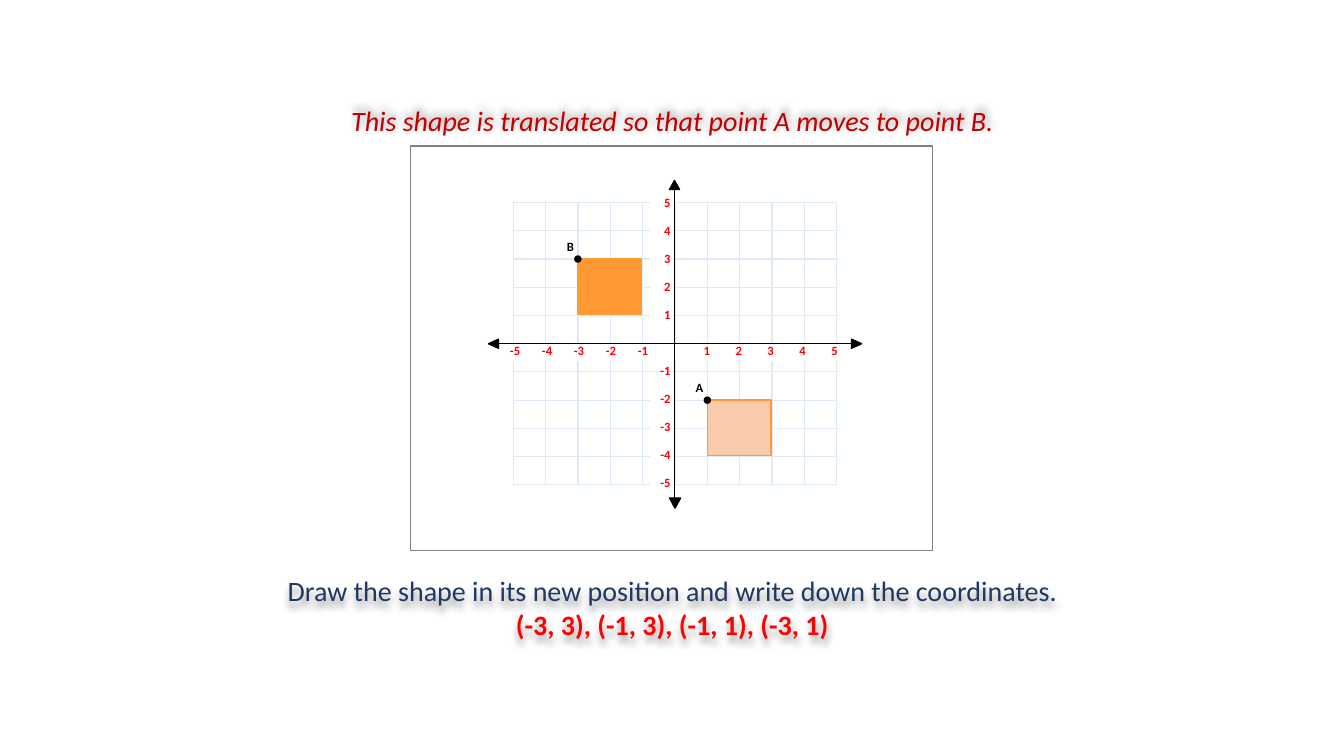
from lxml.etree import SubElement
from pptx import Presentation
from pptx.dml.color import RGBColor
from pptx.enum.shapes import MSO_SHAPE
from pptx.enum.text import MSO_ANCHOR, PP_ALIGN
from pptx.oxml.ns import qn
from pptx.util import Inches, Pt

TITLE = "This shape is translated so that point A moves to point B."
TASK = "Draw the shape in its new position and write down the coordinates."
ANSWER = "(-3, 3), (-1, 3), (-1, 1), (-3, 1)"
BLACK, WHITE, RED, ORANGE = "000000", "FFFFFF", "FF0000", "FF9933"
PALE, GRID, GREY = "F8CBAD", "DEEBF7", "808080"

LEFT, TOP, WIDE, HIGH = 5.09, 2.01, 3.21, 2.8
UNIT_X, UNIT_Y = WIDE / 10, HIGH / 10
MID_X, MID_Y = LEFT + WIDE / 2, TOP + HIGH / 2
SIDE = (0.63, 0.55)
DOT = 0.06

# name: (x, y, fill of the square whose top left corner it marks)
POINTS = {"A": (1, -2, PALE), "B": (-3, 3, ORANGE)}
NUMBERS = [-5, -4, -3, -2, -1, 1, 2, 3, 4, 5]
# left, top, width, height, turn
ARROWS = [
    (6.64, 1.79, 0.1, 0.09, 0),
    (6.64, 4.94, 0.11, 0.1, 180),
    (8.45, 3.36, 0.09, 0.1, 90),
    (4.85, 3.36, 0.09, 0.1, 270),
]

deck = Presentation()
deck.slide_width, deck.slide_height = Inches(13.33), Inches(7.5)
slide = deck.slides.add_slide(deck.slide_layouts[1])


def rgb(code):
    return RGBColor.from_string(code)


def write(para, text, size=9, color=BLACK, bold=False, italic=False,
          align=PP_ALIGN.CENTER):
    para.alignment = align
    para.line_spacing, para.space_before = 1.0, Pt(0)
    run = para.add_run()
    run.text = text
    font = run.font
    font.name, font.size, font.bold, font.italic = "Calibri", Pt(size), bold, italic
    font.color.rgb = rgb(color)


def shade(holder, turn):
    """Give the text a soft shadow, cast at the given angle."""
    effects = SubElement(holder._element.spPr, qn("a:effectLst"))
    cast = SubElement(effects, qn("a:outerShdw"), blurRad=str(Pt(5)),
                      dist=str(Pt(4)), dir=str(turn * 60000), algn="ctr", rotWithShape="0")
    tint = SubElement(cast, qn("a:srgbClr"), val=BLACK)
    SubElement(tint, qn("a:alpha"), val="40000")


def place(holder, top, high, turn):
    holder.left, holder.top = Inches(1.97), Inches(top)
    holder.width, holder.height = Inches(9.4), Inches(high)
    frame = holder.text_frame
    frame.margin_left = frame.margin_right = frame.margin_top = frame.margin_bottom = 0
    frame.vertical_anchor = MSO_ANCHOR.TOP
    frame.word_wrap = True
    shade(holder, turn)
    return frame


def draw(kind, left, top, wide, high, fill, line, turn=0):
    shape = slide.shapes.add_shape(kind, Inches(left), Inches(top), Inches(wide), Inches(high))
    shape.shadow.inherit = False
    shape.fill.solid()
    shape.fill.fore_color.rgb = rgb(fill)
    shape.line.color.rgb = rgb(line)
    shape.line.width = Pt(1)
    shape.rotation = turn


def add_grid(left, top, cols, rows):
    """Add a table with the given column widths and row heights."""
    table = slide.shapes.add_table(
        len(rows), len(cols), Inches(left), Inches(top),
        Inches(sum(cols)), Inches(sum(rows))).table
    table.first_row = table.horz_banding = False
    for col, wide in zip(table.columns, cols):
        col.width = Inches(wide)
    for row, high in zip(table.rows, rows):
        row.height = Inches(high)
    return table


def set_cell(cell, text="", edges="", line=BLACK, fill=WHITE, pad=(0, 0, 0, 0),
             anchor=MSO_ANCHOR.MIDDLE, **style):
    cell.margin_left, cell.margin_top, cell.margin_right, cell.margin_bottom = map(Inches, pad)
    cell.vertical_anchor = anchor
    props = cell._tc.get_or_add_tcPr()
    for edge in "LRTB":
        border = SubElement(props, qn("a:ln" + edge), w=str(Pt(1)))
        if edge in edges:
            paint = SubElement(border, qn("a:solidFill"))
            SubElement(paint, qn("a:srgbClr"), val=line)
        else:
            SubElement(border, qn("a:noFill"))
    if fill:
        cell.fill.solid()
        cell.fill.fore_color.rgb = rgb(fill)
    else:
        cell.fill.background()
    para = cell.text_frame.paragraphs[0]
    if text:
        write(para, text, bold=True, **style)
    else:
        SubElement(para._p, qn("a:endParaRPr"), sz="900")


title, body = slide.placeholders
write(place(title, 1.03, 0.34, 270).paragraphs[0], TITLE, size=20, color="C00000", italic=True)
frame = place(body, 5.69, 0.7, 90)
write(frame.paragraphs[0], TASK, size=20, color="203864")
write(frame.add_paragraph(), ANSWER, size=20, color=RED, bold=True)
for para in frame.paragraphs:
    props = para._p.get_or_add_pPr()
    props.set("marL", "0")
    props.set("indent", "0")
    SubElement(props, qn("a:buNone"))

draw(MSO_SHAPE.RECTANGLE, 4.07, 1.45, 5.18, 4.01, WHITE, GREY)

# A point's name sits in the cell up and left of it
names = {(5 - y - 1, x + 5 - 1): name for name, (x, y, _) in POINTS.items()}
grid = add_grid(LEFT, TOP, [UNIT_X] * 10, [UNIT_Y] * 10)
for row in range(10):
    for col in range(10):
        set_cell(grid.cell(row, col), names.get((row, col), ""), "LRTB", GRID,
                 pad=(0.04,) * 4, anchor=MSO_ANCHOR.BOTTOM, align=PP_ALIGN.RIGHT)

axis_y = add_grid(6.45, 1.88, [0.24], [3.06 / 11] * 11)
for row in range(11):
    value = 5 - row
    set_cell(axis_y.cell(row, 0), str(value) if value else "", "R",
             fill=None if value == -1 else WHITE, pad=(0, 0, 0.04, 0),
             color=RED, align=PP_ALIGN.RIGHT)

for left, top, wide, high, turn in ARROWS[:2]:
    draw(MSO_SHAPE.ISOSCELES_TRIANGLE, left, top, wide, high, BLACK, BLACK, turn)

step = 3.49 / 11
marks = NUMBERS[:5] + ["", ""] + NUMBERS[5:]
axis_x = add_grid(4.95, MID_Y, [step if mark else step / 2 for mark in marks], [0.17])
for col, mark in enumerate(marks):
    set_cell(axis_x.cell(0, col), str(mark), "T" + {5: "R", 6: "L"}.get(col, ""),
             anchor=MSO_ANCHOR.TOP, color=RED)

for left, top, wide, high, turn in ARROWS[2:]:
    draw(MSO_SHAPE.ISOSCELES_TRIANGLE, left, top, wide, high, BLACK, BLACK, turn)

for x, y, fill in POINTS.values():
    left, top = MID_X + x * UNIT_X, MID_Y - y * UNIT_Y
    draw(MSO_SHAPE.RECTANGLE, left, top, *SIDE, fill, ORANGE)
    draw(MSO_SHAPE.OVAL, left - DOT / 2, top - DOT / 2, DOT, DOT, BLACK, BLACK)

deck.save("out.pptx")
